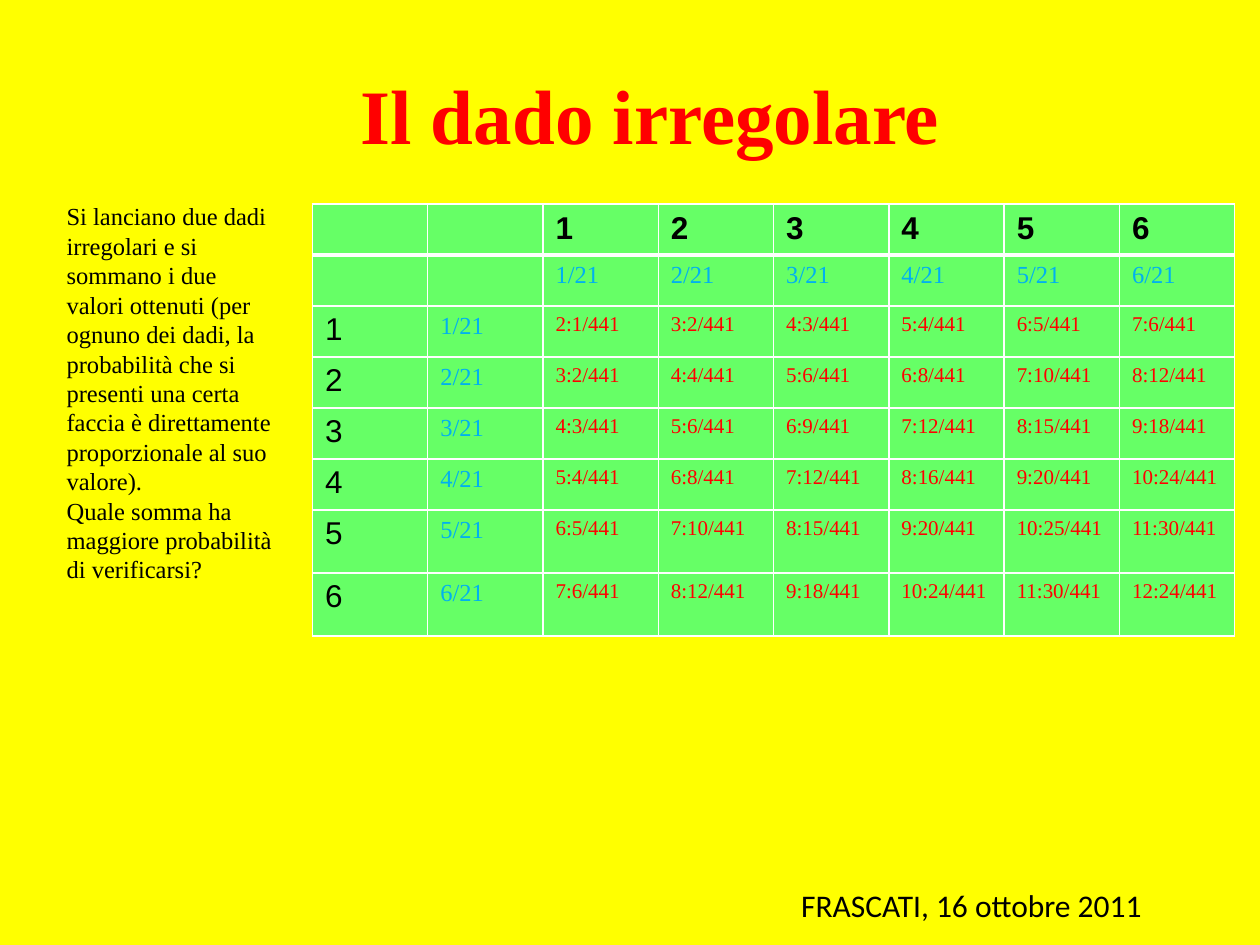
from lxml import etree
from pptx import Presentation
from pptx.dml.color import RGBColor
from pptx.enum.text import MSO_ANCHOR, PP_ALIGN
from pptx.oxml.ns import qn
from pptx.util import Inches, Pt

LEFT, CENTER = PP_ALIGN.LEFT, PP_ALIGN.CENTER
MIDDLE = MSO_ANCHOR.MIDDLE
SERIF = "Times New Roman"
FACES = range(1, 7)


def write(frame, text, size=14, font=SERIF, color="000000", bold=False, align=LEFT):
    frame.word_wrap = True
    for index, line in enumerate(text.split("\n")):
        paragraph = frame.paragraphs[0] if index == 0 else frame.add_paragraph()
        paragraph.alignment = align
        run = paragraph.add_run()
        run.text = line
        run.font.size = Pt(size)
        run.font.name = font
        run.font.bold = bold
        run.font.color.rgb = RGBColor.from_string(color)


def add_border(cell, side, width, color="FFFFFF"):
    line = etree.SubElement(cell._tc.get_or_add_tcPr(), qn(f"a:ln{side}"), w=str(Pt(width)))
    fill = etree.SubElement(line, qn("a:solidFill"))
    etree.SubElement(fill, qn("a:srgbClr"), val=color)


prs = Presentation()
prs.slide_width, prs.slide_height = Inches(10), Inches(7.5)
slide = prs.slides.add_slide(prs.slide_layouts[6])
slide.background.fill.solid()
slide.background.fill.fore_color.rgb = RGBColor.from_string("FFFF00")

problem = slide.shapes.add_textbox(Inches(0.43), Inches(1.55), Inches(1.89), Inches(3.16))
write(problem.text_frame,
      "Si lanciano due dadi irregolari e si sommano i due valori ottenuti "
      "(per ognuno dei dadi, la probabilità che si presenti una certa faccia "
      "è direttamente proporzionale al suo valore).\n"
      "Quale somma ha maggiore probabilità di verificarsi?")

outcomes = [["", ""] + [str(face) for face in FACES],
            ["", ""] + [f"{face}/21" for face in FACES]]
for first in FACES:
    sums = [f"{first + second}:{first * second}/441" for second in FACES]
    outcomes.append([str(first), f"{first}/21"] + sums)
outcomes[-1][-1] = "12:24/441"

table_width, table_height, tall_row = 7.32, 3.43, 0.5
table = slide.shapes.add_table(8, 8, Inches(2.48), Inches(1.62),
                               Inches(table_width), Inches(table_height)).table
for column in table.columns:
    column.width = Inches(table_width / 8)
for r, row in enumerate(table.rows):
    row.height = Inches(tall_row if r >= 6 else (table_height - 2 * tall_row) / 6)

for r, values in enumerate(outcomes):
    for c, value in enumerate(values):
        cell = table.cell(r, c)
        add_border(cell, "L", 1)
        add_border(cell, "R", 1)
        add_border(cell, "T", 3 if r == 1 else 1)
        add_border(cell, "B", 3 if r == 0 else 1)
        cell.fill.solid()
        cell.fill.fore_color.rgb = RGBColor.from_string("66FF66")
        if not value:
            continue
        if r == 0 or c == 0:
            write(cell.text_frame, value, size=18, font="Arial", bold=r == 0)
        elif r == 1 or c == 1:
            write(cell.text_frame, value, color="00B0F0")
        else:
            write(cell.text_frame, value, size=12, color="FF0000")

title = slide.shapes.add_textbox(Inches(0.91), Inches(0.36), Inches(8.5), Inches(1.09))
title.text_frame.vertical_anchor = MIDDLE
write(title.text_frame, "Il dado irregolare", size=44, color="FF0000", bold=True, align=CENTER)

place_date = slide.shapes.add_textbox(Inches(6.26), Inches(6.98), Inches(3.07), Inches(0.4))
write(place_date.text_frame, "FRASCATI, 16 ottobre 2011", size=18, font="Calibri")

prs.save("out.pptx")
